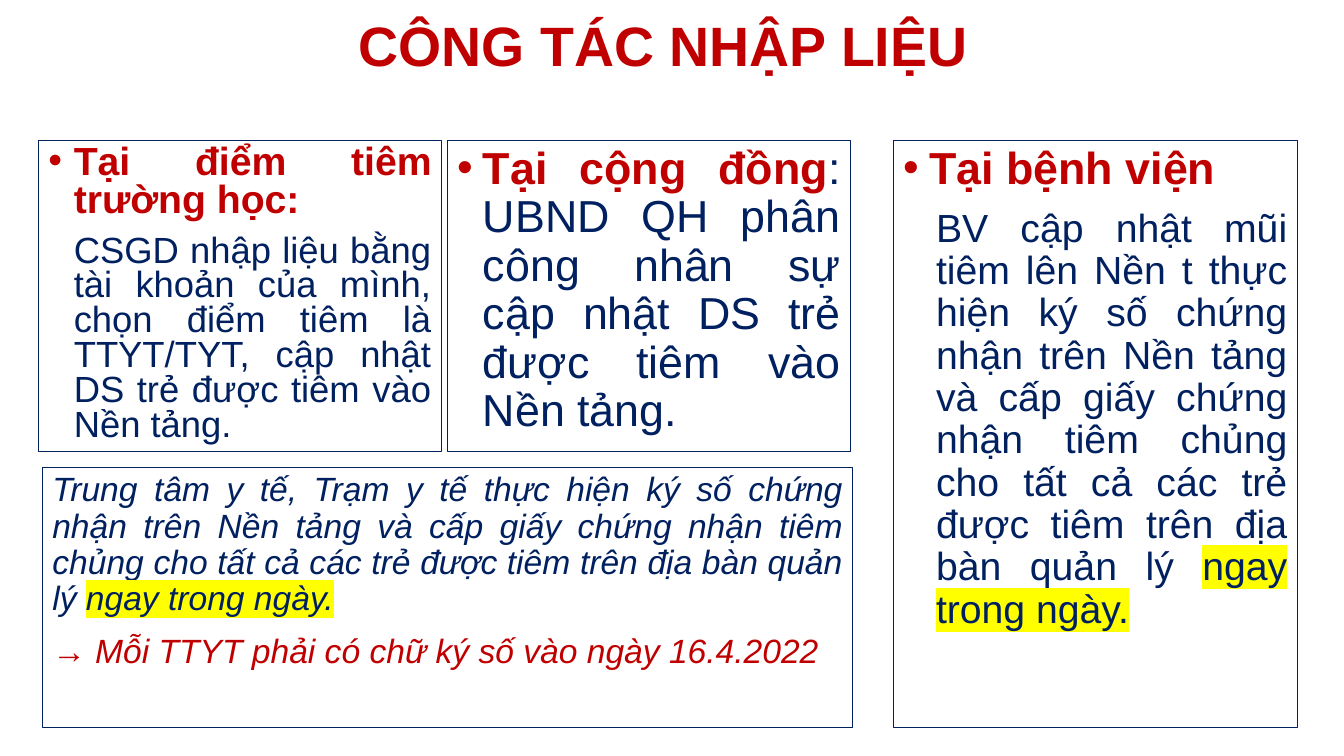
from lxml.etree import SubElement
from pptx import Presentation
from pptx.dml.color import RGBColor
from pptx.enum.text import MSO_ANCHOR, MSO_AUTO_SIZE, PP_ALIGN
from pptx.oxml.ns import qn
from pptx.util import Cm, Pt

COLORS = {"red": "C00000", "navy": "002060", "yellow": "FFFF00"}
FONT = "Arial"
HANGING = 0.64


def add_run(paragraph, text, size, color, bold=False, italic=False, highlight=None):
    """Append one formatted run to the paragraph."""
    run = paragraph.add_run()
    run.text = text
    font = run.font
    font.size, font.bold, font.italic = Pt(size), bold, italic
    font.color.rgb = RGBColor.from_string(COLORS[color])
    if highlight:
        marker = SubElement(run._r.get_or_add_rPr(), qn("a:highlight"))
        SubElement(marker, qn("a:srgbClr"), val=COLORS[highlight])
    font.name = FONT


def add_panel(slide, box):
    """Add an outlined text panel and return its text frame."""
    panel = slide.shapes.add_textbox(*map(Cm, box))
    panel.line.color.rgb = RGBColor.from_string(COLORS["navy"])
    panel.line.width = Pt(0.75)
    frame = panel.text_frame
    frame.word_wrap = True
    frame.auto_size = MSO_AUTO_SIZE.NONE
    frame.vertical_anchor = MSO_ANCHOR.TOP
    return frame


def add_paragraph(frame, line_spacing=0.9, before=10, after=0, indent=0, bullet=False):
    """Return the next justified paragraph, reusing the empty first one."""
    first = frame.paragraphs[0]
    paragraph = frame.add_paragraph() if first.runs else first
    paragraph.alignment = PP_ALIGN.JUSTIFY
    paragraph.line_spacing = line_spacing
    paragraph.space_before, paragraph.space_after = Pt(before), Pt(after)
    properties = paragraph._p.get_or_add_pPr()
    properties.set("marL", str(Cm(indent)))
    properties.set("indent", str(-Cm(indent) if bullet else 0))
    if bullet:
        SubElement(properties, qn("a:buFont"), typeface=FONT)
        SubElement(properties, qn("a:buChar"), char="•")
    else:
        SubElement(properties, qn("a:buNone"))
    return paragraph


def add_heading(frame, text, size, line_spacing=0.9):
    """Add a bulleted red heading and return its paragraph."""
    heading = add_paragraph(frame, line_spacing, indent=HANGING, bullet=True)
    add_run(heading, text, size, "red", bold=True)
    return heading


def add_title(slide, box):
    """Place and format the title placeholder."""
    title = slide.shapes.title
    title.left, title.top, title.width, title.height = map(Cm, box)
    frame = title.text_frame
    frame.auto_size = MSO_AUTO_SIZE.NONE
    frame.vertical_anchor = MSO_ANCHOR.MIDDLE
    heading = frame.paragraphs[0]
    heading.alignment = PP_ALIGN.CENTER
    heading.line_spacing = 0.9
    add_run(heading, "CÔNG TÁC NHẬP LIỆU", 39.6, "red", bold=True)


def add_school(slide, box):
    """Add the panel on school vaccination sites."""
    frame = add_panel(slide, box)
    add_heading(frame, "Tại điểm tiêm trường học:", 28, 0.8)
    duty = add_paragraph(frame, 0.8, indent=HANGING)
    add_run(duty, "CSGD nhập liệu bằng tài khoản của mình, chọn điểm tiêm là TTYT/TYT, "
            "cập nhật DS trẻ được tiêm vào Nền tảng.", 26, "navy")


def add_community(slide, box):
    """Add the panel on community sites."""
    duty = add_heading(add_panel(slide, box), "Tại cộng đồng", 32)
    add_run(duty, ": UBND QH phân công nhân sự cập nhật DS trẻ được tiêm vào Nền tảng.",
            32, "navy")


def add_hospital(slide, box):
    """Add the panel on hospitals."""
    frame = add_panel(slide, box)
    add_heading(frame, "Tại bệnh viện", 32)
    duty = add_paragraph(frame, indent=0.81)
    add_run(duty, "BV cập nhật mũi tiêm lên Nền t thực hiện ký số chứng nhận trên Nền tảng "
            "và cấp giấy chứng nhận tiêm chủng cho tất cả các trẻ được tiêm trên địa bàn "
            "quản lý ", 28, "navy")
    add_run(duty, "ngay trong ngày.", 28, "navy", highlight="yellow")


def add_signing(slide, box):
    """Add the panel on digital signing by health centres."""
    frame = add_panel(slide, box)
    duty = add_paragraph(frame, before=6, after=6)
    add_run(duty, "Trung tâm y tế, Trạm y tế thực hiện ký số chứng nhận trên Nền tảng và cấp "
            "giấy chứng nhận tiêm chủng cho tất cả các trẻ được tiêm trên địa bàn quản lý ",
            24, "navy", italic=True)
    add_run(duty, "ngay trong ngày.", 24, "navy", italic=True, highlight="yellow")
    deadline = add_paragraph(frame, before=6, after=6)
    add_run(deadline, "→ Mỗi TTYT phải có chữ ký số vào ngày 16.4.2022", 24, "red", italic=True)


def main():
    """Build the slide and save it."""
    deck = Presentation()
    deck.slide_width, deck.slide_height = Cm(33.87), Cm(19.05)
    slide = deck.slides.add_slide(deck.slide_layouts[5])
    top, width, height = 3.55, 10.16, 7.82
    add_title(slide, (2.11, 0.41, 29.21, 1.63))
    add_community(slide, (11.28, top, width, height))
    add_hospital(slide, (22.53, top, width, 14.78))
    add_school(slide, (0.97, top, width, height))
    add_signing(slide, (1.07, 11.79, 20.42, 6.55))
    deck.save("out.pptx")


if __name__ == "__main__":
    main()
